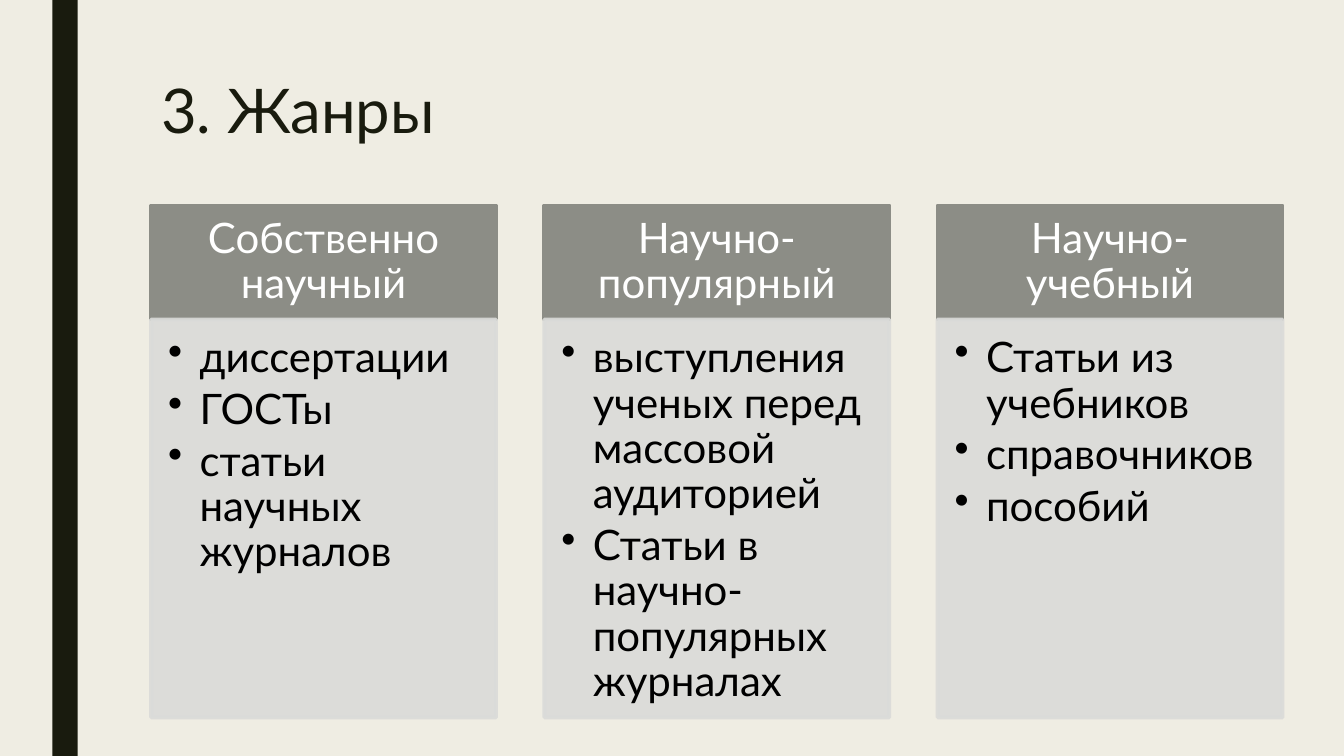
"""Build the slide on genres of scientific style."""
from lxml import etree
from pptx import Presentation
from pptx.dml.color import RGBColor
from pptx.enum.shapes import MSO_SHAPE
from pptx.enum.text import MSO_ANCHOR, PP_ALIGN
from pptx.oxml.ns import qn
from pptx.util import Cm, Pt

RECTANGLE = MSO_SHAPE.RECTANGLE
TOP, MIDDLE = MSO_ANCHOR.TOP, MSO_ANCHOR.MIDDLE
LEFT, CENTER = PP_ALIGN.LEFT, PP_ALIGN.CENTER

CREAM = RGBColor(0xEF, 0xED, 0xE3)
DARK = RGBColor(0x19, 0x1B, 0x0E)
GRAY = RGBColor(0x8C, 0x8D, 0x86)
PALE = RGBColor(0xDA, 0xDB, 0xD9)
WHITE = RGBColor(0xFF, 0xFF, 0xFF)
BLACK = RGBColor(0x00, 0x00, 0x00)

GENRES = {
    "Собственно научный": ["диссертации", "ГОСТы", "статьи научных журналов"],
    "Научно-популярный": [
        "выступления ученых перед массовой аудиторией",
        "Статьи в научно-популярных журналах",
    ],
    "Научно-учебный": ["Статьи из учебников", "справочников", "пособий"],
}
COLUMN_LEFT, COLUMN_STEP, COLUMN_WIDTH = 3.81, 9.91, 8.69
HEADER_TOP, HEADER_HEIGHT, LIST_HEIGHT = 5.18, 2.87, 10.03


class GenreSlide:
    """Hold the text style and the current slide."""

    font = "Lato"
    line_spacing = 0.9

    def __init__(self, slide):
        """Keep the slide and paint its background."""
        self.slide = slide
        slide.background.fill.solid()
        slide.background.fill.fore_color.rgb = CREAM

    def set_text(self, frame, lines, size, color, align, anchor, insets):
        """Fill a text frame with styled paragraphs."""
        sides = ("margin_left", "margin_top", "margin_right", "margin_bottom")
        frame_format = {"word_wrap": True, "vertical_anchor": anchor}
        frame_format.update(zip(sides, map(Cm, insets)))
        for name, value in frame_format.items():
            setattr(frame, name, value)
        for index, line in enumerate(lines):
            paragraph = frame.add_paragraph() if index else frame.paragraphs[0]
            paragraph.alignment = align
            paragraph.line_spacing = self.line_spacing
            run = paragraph.add_run()
            run.text = line
            for name, value in {"name": self.font, "size": Pt(size)}.items():
                setattr(run.font, name, value)
            run.font.color.rgb = color

    def block(self, left, top, width, height, color, border=0):
        """Add a flat rectangle."""
        block = self.slide.shapes.add_shape(
            RECTANGLE, Cm(left), Cm(top), Cm(width), Cm(height))
        block.shadow.inherit = False
        block.fill.solid()
        block.fill.fore_color.rgb = color
        if border:
            block.line.color.rgb = color
            block.line.width = Pt(border)
        else:
            block.line.fill.background()
        return block

    def title(self, text):
        """Add the slide title."""
        title = self.slide.shapes.add_textbox(Cm(3.81), Cm(1.9), Cm(26.67), Cm(4.11))
        self.set_text(title.text_frame, [text], 44, DARK, LEFT, TOP,
                      (0.25, 0.13, 0.25, 0.13))

    def header(self, left, text):
        """Add a column header."""
        header = self.block(left, HEADER_TOP, COLUMN_WIDTH, HEADER_HEIGHT, GRAY, 2.75)
        self.set_text(header.text_frame, [text], 30, WHITE, CENTER, MIDDLE,
                      (0.58, 0.33, 0.58, 0.33))

    def bullet_list(self, left, items):
        """Add a translucent panel with bulleted items."""
        panel = self.block(left, HEADER_TOP + HEADER_HEIGHT, COLUMN_WIDTH,
                           LIST_HEIGHT, PALE, 2.75)
        for tint in panel.element.spPr.iter(qn("a:srgbClr")):
            etree.SubElement(tint, qn("a:alpha"), val="90000")
        self.set_text(panel.text_frame, items, 30, BLACK, LEFT, TOP,
                      (0.43, 0.43, 0.58, 0.66))
        for paragraph in panel.text_frame.paragraphs:
            paragraph.space_after = Pt(4.5)
            properties = paragraph._p.get_or_add_pPr()
            properties.set("marL", str(Cm(0.79)))
            properties.set("indent", str(-Cm(0.79)))
            etree.SubElement(properties, qn("a:buChar"), char="•")


def main():
    """Compose and save the presentation."""
    presentation = Presentation()
    presentation.slide_width = Cm(33.87)
    presentation.slide_height = Cm(19.05)
    page = GenreSlide(presentation.slides.add_slide(presentation.slide_layouts[6]))
    page.block(1.32, 0, 0.64, 19.05, DARK)
    page.title("3. Жанры")
    for column, (genre, examples) in enumerate(GENRES.items()):
        left = COLUMN_LEFT + column * COLUMN_STEP
        page.header(left, genre)
        page.bullet_list(left, examples)
    presentation.save("out.pptx")


if __name__ == "__main__":
    main()
